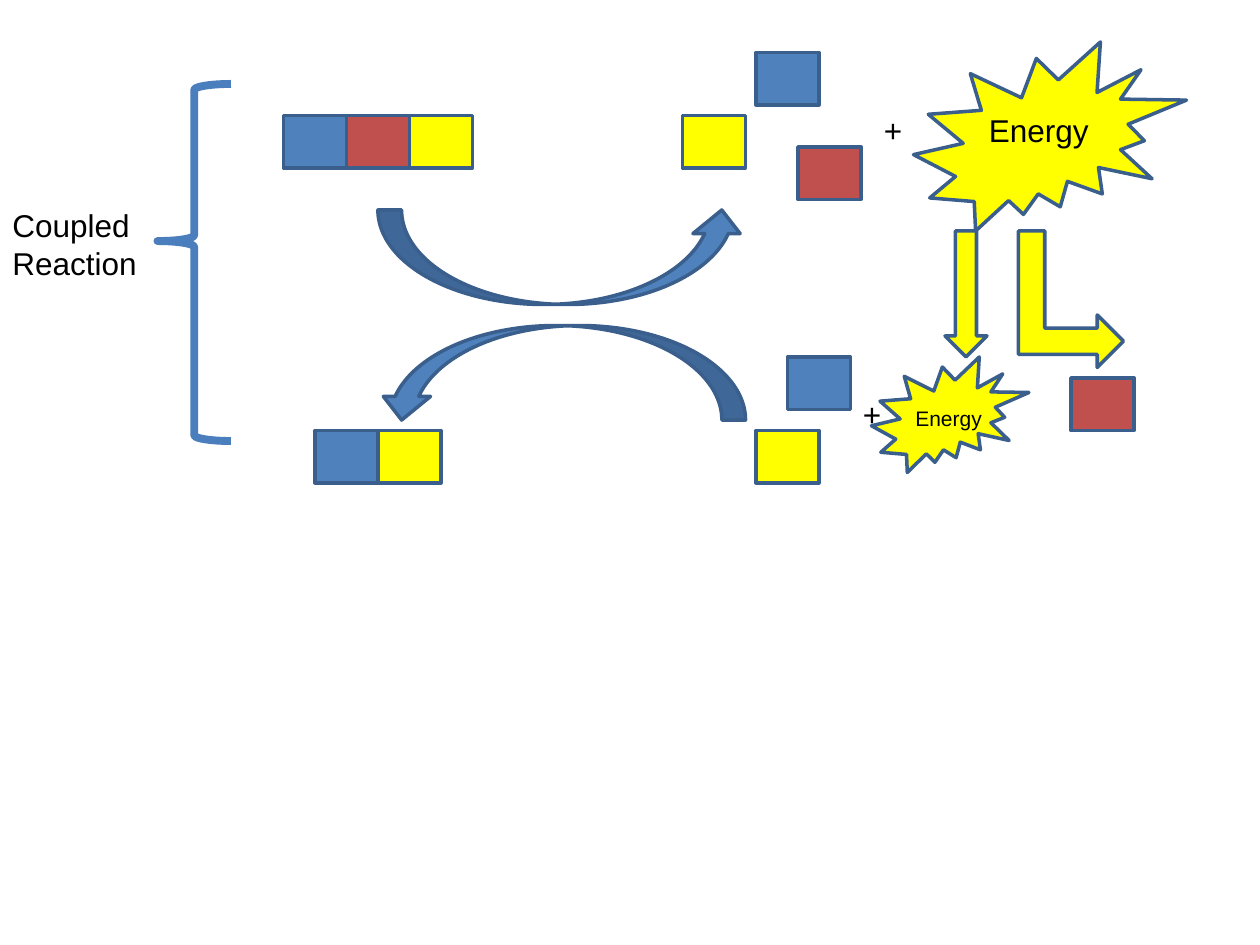
from pptx import Presentation
from pptx.dml.color import RGBColor
from pptx.enum.shapes import MSO_SHAPE as Shape
from pptx.enum.text import MSO_AUTO_SIZE as AutoSize
from pptx.util import Cm, Pt

COLORS = {
    "blue": "4F81BD",
    "red": "C0504D",
    "yellow": "FFFF00",
    "outline": "3A5F8C",
    "brace": "4B7EBC",
    "text": "000000",
}
FONT = "Arial"

# All positions and sizes below count steps of a twelfth of an inch.
STEP = 2.54 / 12
BLOCK_W, BLOCK_H = 6, 5

# Joined molecules: left, top, blocks from left to right
MOLECULES = [
    (27, 11, ["blue", "red", "yellow"]),
    (30, 41, ["blue", "yellow"]),
]
# Free blocks: left, top, colour
FREE_BLOCKS = [
    (65, 11, "yellow"), (72, 5, "blue"), (76, 14, "red"),
    (72, 41, "yellow"), (75, 34, "blue"), (102, 36, "red"),
]
# Preset, (left, top, width, height), colour, rotation
REACTION_ARROWS = [
    (Shape.CURVED_UP_ARROW, (36, 20, 35, 9), "blue", 0),
    (Shape.CURVED_UP_ARROW, (36, 31, 35, 9), "blue", 180),
]
ENERGY_SHAPES = [
    (Shape.EXPLOSION2, (87, 4, 26, 18), "yellow", 0),
    (Shape.EXPLOSION2, (83, 34, 15, 11), "yellow", 0),
    (Shape.BENT_UP_ARROW, (95.5, 23.5, 13, 10), "yellow", 90),
    (Shape.DOWN_ARROW, (90, 22, 4, 12), "yellow", 0),
]
# Text, (left, top, width, height), size
LABELS = [
    ("Energy", (93, 10, 13, 4.8), 18),
    ("+", (83, 10, 5, 5), 18),
    ("Energy", (86, 38, 13, 3.6), 12),
    ("+", (81, 37, 5, 5), 18),
    ("Coupled Reaction", (0, 19, 17, 8.5), 18),
]
BRACE_BOX = (15, 8, 7, 34)
BRACE_ADJUSTMENTS = (0.08, 0.44)


def rgb(name):
    return RGBColor.from_string(COLORS[name])


def on_grid(box):
    return [Cm(n * STEP) for n in box]


def add_shape(slide, preset, box, fill=None, rotation=0, line="outline", width=2):
    s = slide.shapes.add_shape(preset, *on_grid(box))
    s.shadow.inherit = False
    s.rotation = rotation
    if fill:
        s.fill.solid()
        s.fill.fore_color.rgb = rgb(fill)
    else:
        s.fill.background()
    s.line.color.rgb = rgb(line)
    s.line.width = Pt(width)
    return s


def add_text(slide, text, box, size=18, color="text", font=FONT):
    tf = slide.shapes.add_textbox(*on_grid(box)).text_frame
    tf.word_wrap = True
    tf.auto_size = AutoSize.SHAPE_TO_FIT_TEXT
    r = tf.paragraphs[0].add_run()
    r.text = text
    r.font.name = font
    r.font.size = Pt(size)
    r.font.color.rgb = rgb(color)


def add_block(slide, left, top, color):
    add_shape(slide, Shape.RECTANGLE, (left, top, BLOCK_W, BLOCK_H), color)


def main():
    prs = Presentation()
    prs.slide_width, prs.slide_height = Cm(25.4), Cm(19.05)
    slide = prs.slides.add_slide(prs.slide_layouts[6])

    for preset, box, color, rotation in REACTION_ARROWS + ENERGY_SHAPES:
        add_shape(slide, preset, box, color, rotation)
    for left, top, colors in MOLECULES:
        # The leftmost block lies in front, so draw from the right.
        for i, color in reversed(list(enumerate(colors))):
            add_block(slide, left + i * BLOCK_W, top, color)
    for left, top, color in FREE_BLOCKS:
        add_block(slide, left, top, color)
    for text, box, size in LABELS:
        add_text(slide, text, box, size=size)

    brace = add_shape(slide, Shape.LEFT_BRACE, BRACE_BOX, line="brace", width=4.5)
    for i, value in enumerate(BRACE_ADJUSTMENTS):
        brace.adjustments[i] = value

    prs.save("out.pptx")


if __name__ == "__main__":
    main()
